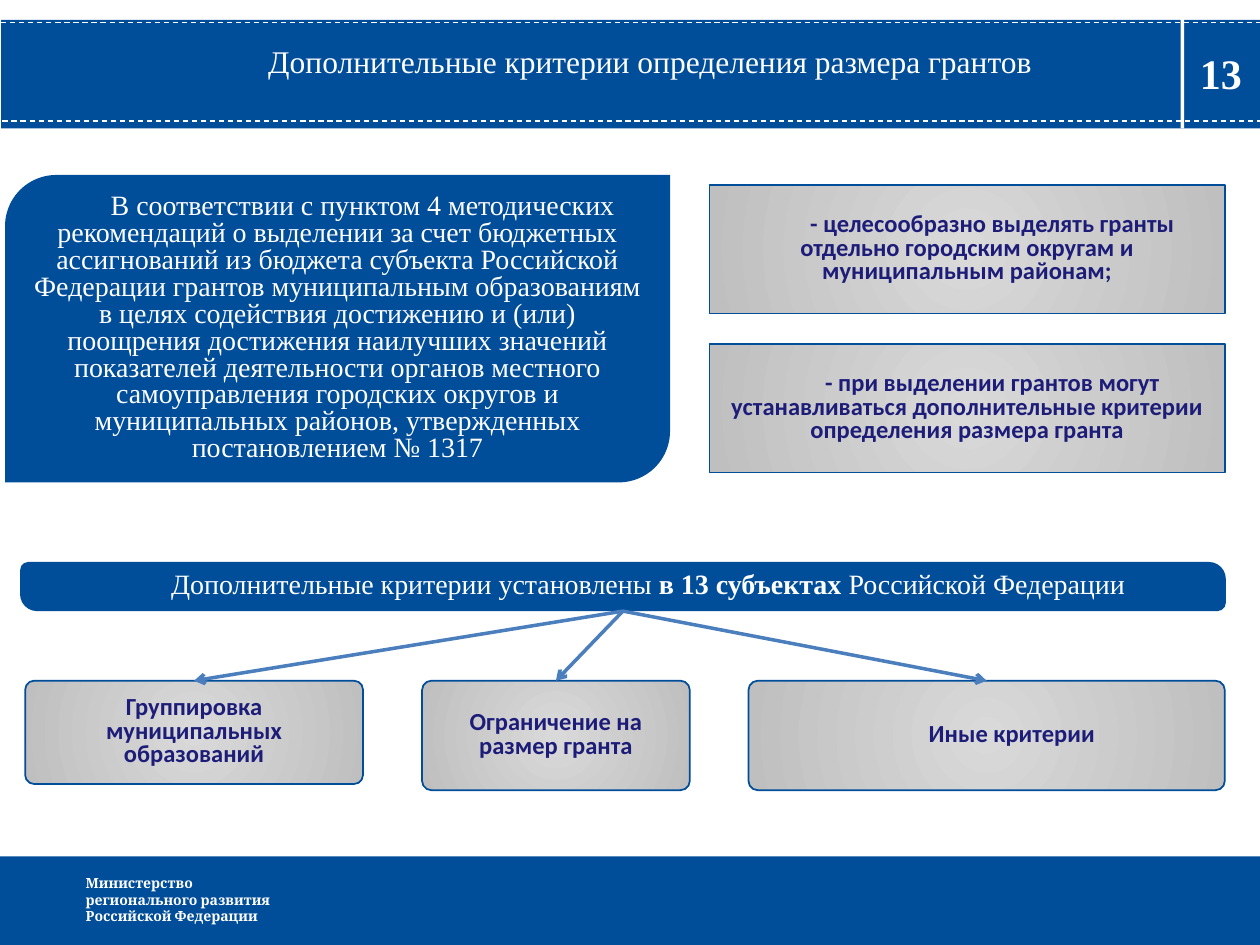
from lxml import etree
from pptx import Presentation
from pptx.dml.color import RGBColor
from pptx.enum import dml, shapes, text
from pptx.oxml import parse_xml
from pptx.oxml.ns import nsdecls, qn
from pptx.util import Pt

HUES = {"blue": "004D9A", "white": "FFFFFF", "navy": "1D1D79",
        "light": "D9D9D9", "gray": "BFBFBF", "arrow": "4B7EBC"}
KIND = shapes.MSO_SHAPE
SERIF, SANS = "Times New Roman", "Calibri"
INDENT = 28.8

TITLE = "Дополнительные критерии определения размера грантов"
NUMBER = "13"
OWNER = ["Министерство", "регионального развития", "Российской Федерации"]
BASIS = (
    "В соответствии с пунктом 4 методических рекомендаций о выделении за счет "
    "бюджетных ассигнований из бюджета субъекта Российской Федерации грантов "
    "муниципальным образованиям в целях содействия достижению и (или) поощрения "
    "достижения наилучших значений показателей деятельности органов местного "
    "самоуправления городских округов и муниципальных районов, утвержденных "
    "постановлением № 1317")
RULES = [
    "- целесообразно выделять гранты отдельно городским округам и муниципальным районам;",
    "- при выделении грантов могут устанавливаться дополнительные критерии "
    "определения размера гранта"]
TOTAL = [("Дополнительные критерии установлены ", False),
         ("в 13 субъектах", True), (" Российской Федерации", False)]
GROUPS = [("Группировка муниципальных образований", 14.4, 193, 59, 0),
          ("Ограничение на размер гранта", 241.2, 153, 62.6, 0),
          ("Иные критерии", 427.7, 272.2, 62.6, INDENT)]

BANDS = [("blue", 0.7, 11.4, 719.3, 62), ("white", 674.6, 11, 2, 62.4),
         ("blue", -0.7, 489.4, 721.4, 50.6)]
DASHES = [(1.4, 69.2), (0.7, 13)]


def color(name):
    """Return the named colour."""
    return RGBColor.from_string(HUES[name])


def place(shape, box):
    """Move and size a shape, in points."""
    shape.left, shape.top, shape.width, shape.height = map(Pt, box)


def style(shape, face, size, hue, bold=False, align="CENTER", space=None, indent=0):
    """Format every paragraph and run of a shape."""
    frame = shape.text_frame
    frame.word_wrap = True
    for para in frame.paragraphs:
        para.alignment = getattr(text.PP_ALIGN, align)
        if space:
            para.line_spacing = space
        if indent:
            para._p.get_or_add_pPr().set("indent", str(Pt(indent)))
        for run in para.runs:
            run.font.name, run.font.size = face, Pt(size)
            run.font.color.rgb = color(hue)
            run.font.bold = bold


def block(slide, kind, box, hue="blue", adjust=()):
    """Add a plain filled shape."""
    shape = slide.shapes.add_shape(kind, *map(Pt, box))
    shape.shadow.inherit = False
    shape.fill.solid()
    shape.fill.fore_color.rgb = color(hue)
    shape.line.fill.background()
    for i, value in enumerate(adjust):
        shape.adjustments[i] = value
    shape.text_frame.vertical_anchor = text.MSO_ANCHOR.MIDDLE
    return shape


def card(slide, kind, box, words, indent, adjust=()):
    """Add a grey radial card with bold text."""
    shape = block(slide, kind, box, adjust=adjust)
    shape.fill.gradient()
    for stop, hue in zip(shape.fill.gradient_stops, ("light", "gray")):
        stop.color.rgb = color(hue)
    grad = shape._element.spPr.find(qn("a:gradFill"))
    grad.replace(grad.find(qn("a:lin")), parse_xml(
        f'<a:path {nsdecls("a")} path="circle">'
        '<a:fillToRect l="50000" t="50000" r="50000" b="50000"/></a:path>'))
    shape.line.color.rgb = color("blue")
    shape.line.width = Pt(1)
    shape.text_frame.text = words
    style(shape, SANS, 14, "navy", True, space=0.8, indent=indent)
    return shape


def wire(slide, ends, hue, width):
    """Add a straight line without a shadow."""
    line = slide.shapes.add_connector(shapes.MSO_CONNECTOR.STRAIGHT, *map(Pt, ends))
    line.line.color.rgb = color(hue)
    line.line.width = Pt(width)
    etree.SubElement(line._element.spPr, qn("a:effectLst"))
    return line


def label(slide, box, words, *look, **more):
    """Add a text box."""
    shape = slide.shapes.add_textbox(*map(Pt, box))
    shape.text_frame.text = words
    style(shape, *look, **more)


def header(slide):
    """Build the bands, the title and the footer."""
    for hue, *box in BANDS:
        block(slide, KIND.RECTANGLE, box, hue)
    for x, y in DASHES:
        dash = wire(slide, (x, y, x + 719.3, y), "white", 0.75)
        dash.line.dash_style = dml.MSO_LINE.DASH
    title = slide.shapes.title
    slide.shapes._spTree.append(title._element)
    place(title, (70.6, 25.9, 601.9, 22.3))
    frame = title.text_frame
    frame.text = TITLE
    frame.auto_size = text.MSO_AUTO_SIZE.NONE
    frame.vertical_anchor = text.MSO_ANCHOR.TOP
    frame.margin_left = frame.margin_right = Pt(4.3)
    frame.margin_top = frame.margin_bottom = Pt(2.2)
    style(title, SERIF, 18, "white", space=0.8)
    label(slide, (675.4, 23.8, 44.6, 36), NUMBER, SERIF, 24, "white", True)
    label(slide, (41.8, 496.1, 183.6, 36), "\n".join(OWNER),
          "Cambria", 8, "white", True, align="LEFT")


def body(slide):
    """Build the cards and the criteria tree."""
    basis = block(slide, KIND.ROUND_2_DIAG_RECTANGLE, (2.9, 100, 380, 175.7))
    basis.text_frame.text = BASIS
    style(basis, SERIF, 16, "white", space=0.8, indent=INDENT)
    for i, words in enumerate(RULES):
        card(slide, KIND.RECTANGLE, (405.4, 105.8 + i * 90.8, 294.5, 73.4), words, INDENT)

    left, top, width, height = 11.5, 321.1, 689, 28.1
    total = block(slide, KIND.ROUND_2_DIAG_RECTANGLE, (left, top, width, height),
                  adjust=(0.167, 0.344))
    para = total.text_frame.paragraphs[0]
    for words, _ in TOTAL:
        para.add_run().text = words
    style(total, SERIF, 16, "white", space=0.8, indent=INDENT)
    for run, (_, bold) in zip(para.runs, TOTAL):
        run.font.bold = bold

    row = 389
    cards = [card(slide, KIND.ROUNDED_RECTANGLE, (x, row, w, h), words, indent, (0.086,))
             for words, x, w, h, indent in GROUPS]
    start = (left + width / 2, top + height)
    for goal in cards:
        arrow = wire(slide, (*start, start[0], row), "arrow", 2)
        arrow.end_connect(goal, 0)
        etree.SubElement(arrow.line._get_or_add_ln(), qn("a:tailEnd"), type="arrow")


def main():
    """Build and save the slide."""
    deck = Presentation()
    deck.slide_width, deck.slide_height = Pt(720), Pt(540)
    slide = deck.slides.add_slide(deck.slide_layouts[5])
    header(slide)
    body(slide)
    deck.save("out.pptx")


if __name__ == "__main__":
    main()
